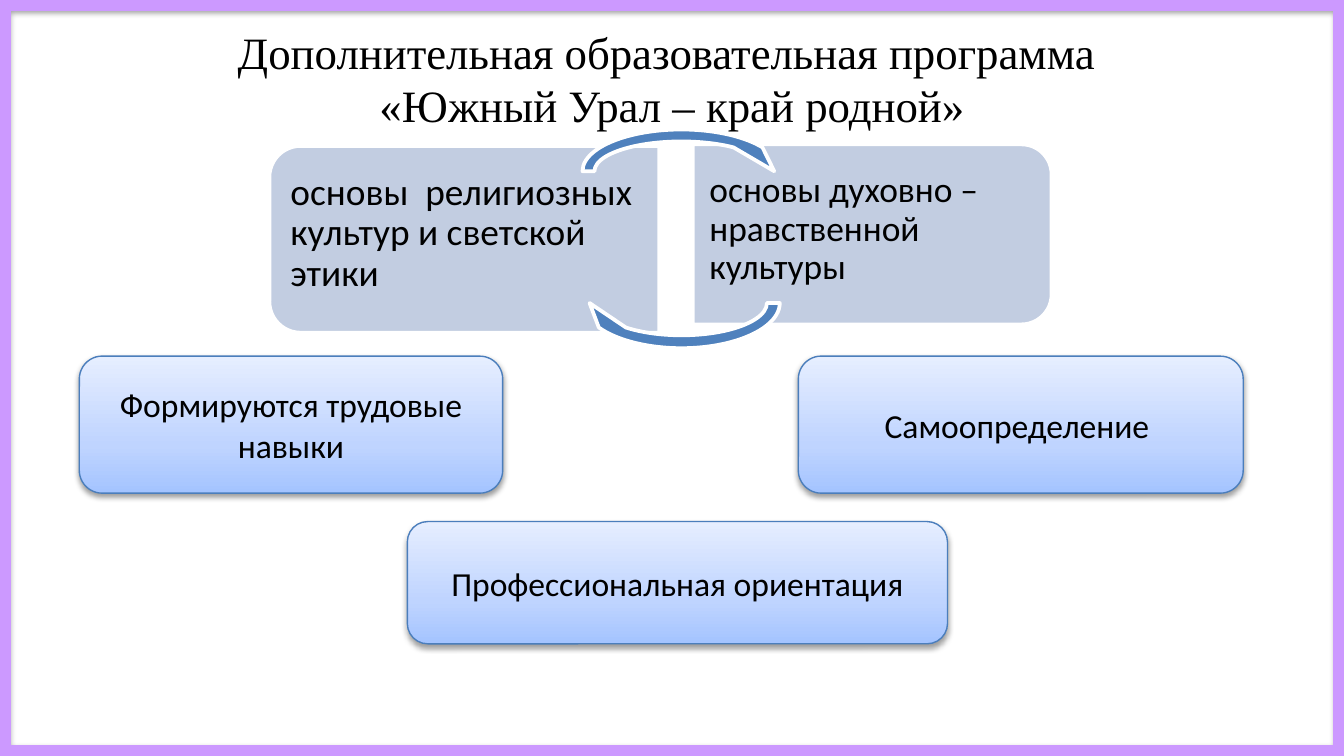
from lxml import etree
from pptx import Presentation
from pptx.dml.color import RGBColor
from pptx.enum import shapes, text
from pptx.oxml import ns
from pptx.util import Pt

COLORS = {
    "frame": "CC99FF", "panel": "C2CDE1", "arrow": "4F81BD", "white": "FFFFFF",
    "black": "000000", "outline": "4B7EBC",
}
GOAL_GRADIENT = [(0, "A4C4FF"), (35, "BFD4FF"), (100, "E6EEFF")]
KIND = shapes.MSO_SHAPE
ALIGN = text.PP_ALIGN
ANCHOR = text.MSO_ANCHOR


def rgb(name):
    return RGBColor.from_string(COLORS[name])


def add_node(parent, tag, **attributes):
    node = etree.SubElement(parent, ns.qn(tag))
    for key, value in attributes.items():
        node.set(key, str(value))
    return node


def add_shadow(shape):
    effects = shape._element.spPr.find(ns.qn("a:effectLst"))
    shadow = add_node(effects, "a:outerShdw", blurRad=Pt(3.1), dist=Pt(1.6),
                      dir=90 * 60000, rotWithShape=0)
    color = add_node(shadow, "a:srgbClr", val=COLORS["black"])
    add_node(color, "a:alpha", val=38000)


def fill_gradient(shape, stops):
    shape.fill.gradient()
    shape.fill.gradient_angle = 90
    stop_list = shape._element.spPr.find(".//" + ns.qn("a:gsLst"))
    for old_stop in list(stop_list):
        stop_list.remove(old_stop)
    for percent, color in stops:
        stop = add_node(stop_list, "a:gs", pos=percent * 1000)
        add_node(stop, "a:srgbClr", val=color)


def add_figure(slide, kind, box, fill, line, width, adjust=(), rotation=0):
    figure = slide.shapes.add_shape(kind, *map(Pt, box))
    figure.shadow.inherit = False
    figure.rotation = rotation
    for index, value in enumerate(adjust):
        figure.adjustments[index] = value
    if fill:
        figure.fill.solid()
        figure.fill.fore_color.rgb = rgb(fill)
    figure.line.color.rgb = rgb(line)
    figure.line.width = Pt(width)
    return figure


def write(shape, words, size, font="Calibri", align=ALIGN.CENTER, anchor=ANCHOR.MIDDLE):
    frame = shape.text_frame
    frame.word_wrap = True
    frame.vertical_anchor = anchor
    frame.text = words
    paragraph = frame.paragraphs[0]
    paragraph.alignment = align
    paragraph.font.size = Pt(size)
    paragraph.font.name = font
    paragraph.font.color.rgb = rgb("black")
    return frame


def add_course(slide, panel, rotation, label, insets, words, size):
    add_figure(slide, KIND.ROUND_2_SAME_RECTANGLE, panel, "panel", "white", 2,
               (0.167, 0), rotation)
    caption = slide.shapes.add_textbox(*map(Pt, label))
    frame = write(caption, words, size, align=ALIGN.LEFT, anchor=ANCHOR.TOP)
    frame.paragraphs[0].line_spacing = 0.9
    frame.margin_left, frame.margin_top, frame.margin_right, frame.margin_bottom = map(Pt, insets)


def add_cycle_arrow(slide, box, rotation=0):
    add_figure(slide, KIND.CIRCULAR_ARROW, box, "arrow", "white", 2,
               (0.125, 11.423, 204.577, 108, 0.125), rotation)


def add_goal(slide, box, words):
    goal = add_figure(slide, KIND.ROUNDED_RECTANGLE, box, None, "outline", 0.75)
    fill_gradient(goal, GOAL_GRADIENT)
    add_shadow(goal)
    write(goal, words, 18)


def main():
    deck = Presentation()
    deck.slide_width, deck.slide_height = Pt(720), Pt(405)
    slide = deck.slides.add_slide(deck.slide_layouts[6])

    # Border: a shadowed frame under a plain one
    page = (0, 0, 720, 405)
    border = add_figure(slide, KIND.FRAME, page, "frame", "frame", 0.75, [0.013])
    add_shadow(border)
    add_figure(slide, KIND.FRAME, page, "frame", "frame", 2, [0.012])

    # Title
    title = slide.shapes.add_textbox(Pt(36), Pt(16.6), Pt(648), Pt(50.4))
    write(title, "Дополнительная образовательная программа \v«Южный Урал – край родной»",
          24, "Times New Roman")

    # Two courses, linked by a cycle of arrows
    add_course(slide, (198.7, 23.8, 100.1, 208.8), 270, (149.8, 82.8, 203.8, 90.7),
               (5.8, 10, 8.6, 10), "основы  религиозных культур и светской этики", 20)
    add_course(slide, (419, 29.5, 96.5, 192.2), 90, (371.5, 82.8, 187.2, 87.1),
               (8.6, 9.4, 5.8, 9.4), "основы духовно – нравственной культуры", 19)
    add_cycle_arrow(slide, (308.9, 66.2, 112.3, 51.1))
    add_cycle_arrow(slide, (308.9, 134.6, 112.3, 55.4), 180)

    # Goals
    add_goal(slide, (42.5, 190.8, 226.8, 73.4), "Формируются трудовые навыки")
    add_goal(slide, (427.7, 190.8, 238.3, 73.4), "Самоопределение ")
    add_goal(slide, (218.2, 279.4, 289.4, 65.5), "Профессиональная ориентация")

    deck.save("out.pptx")


if __name__ == "__main__":
    main()
